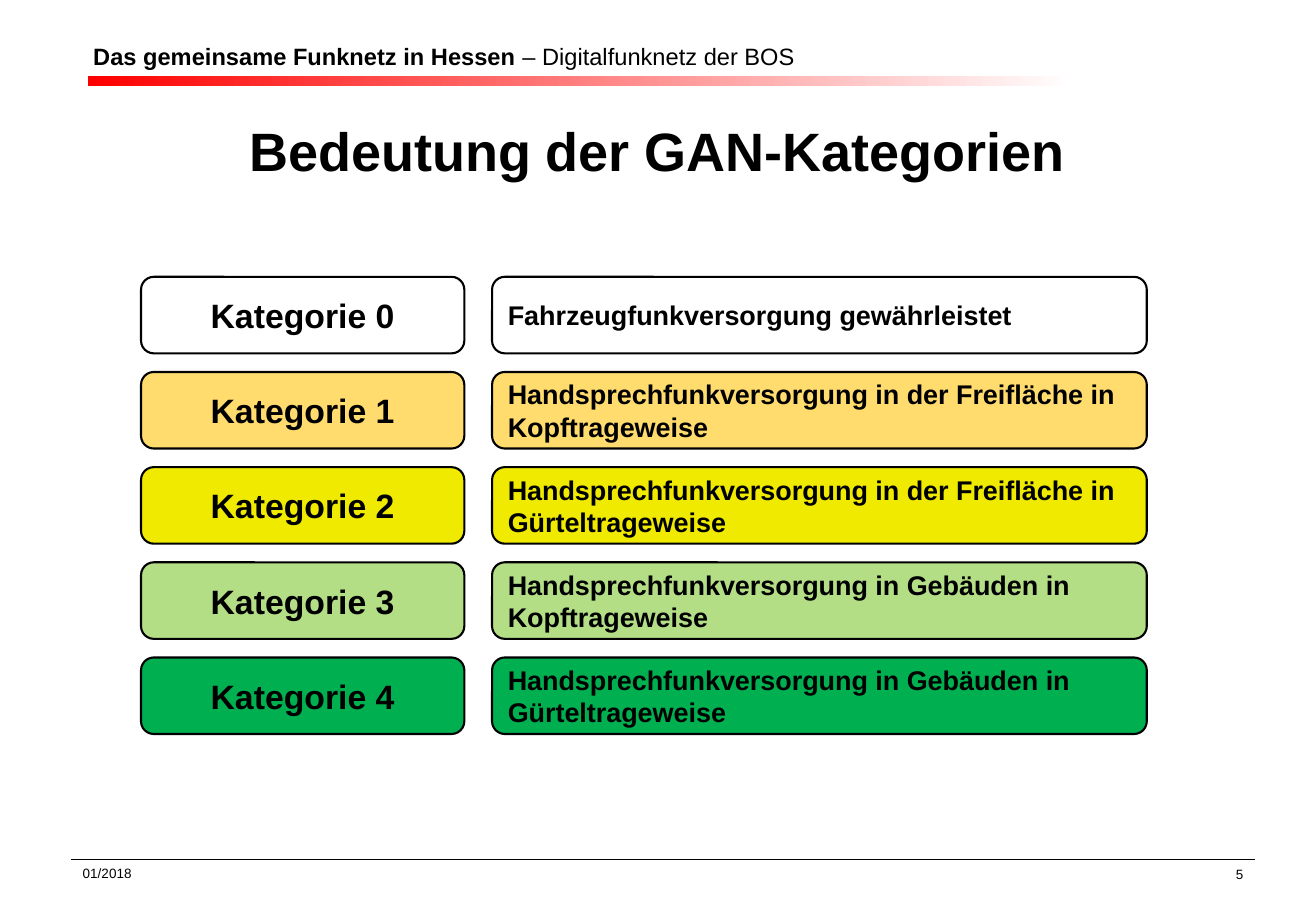
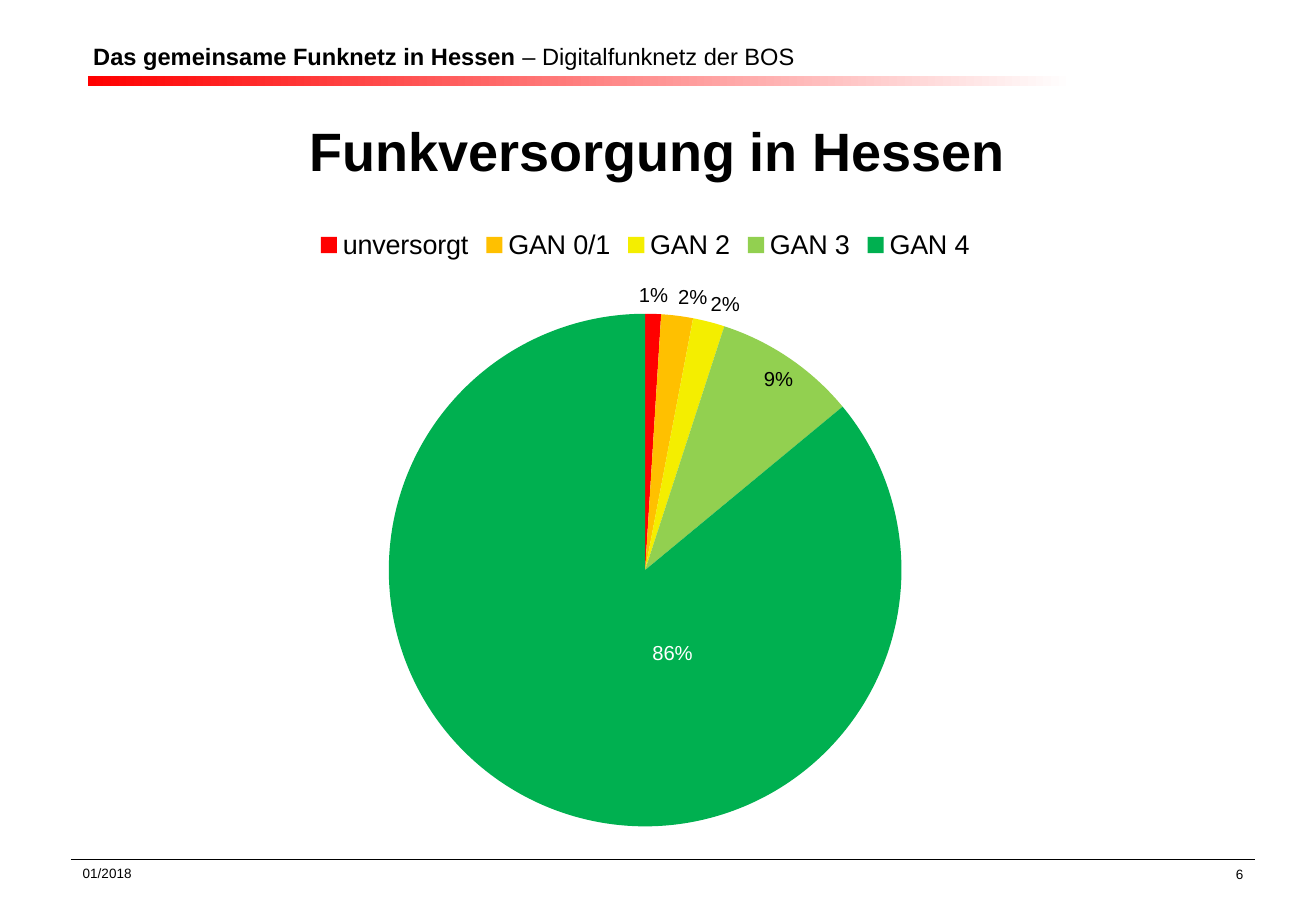
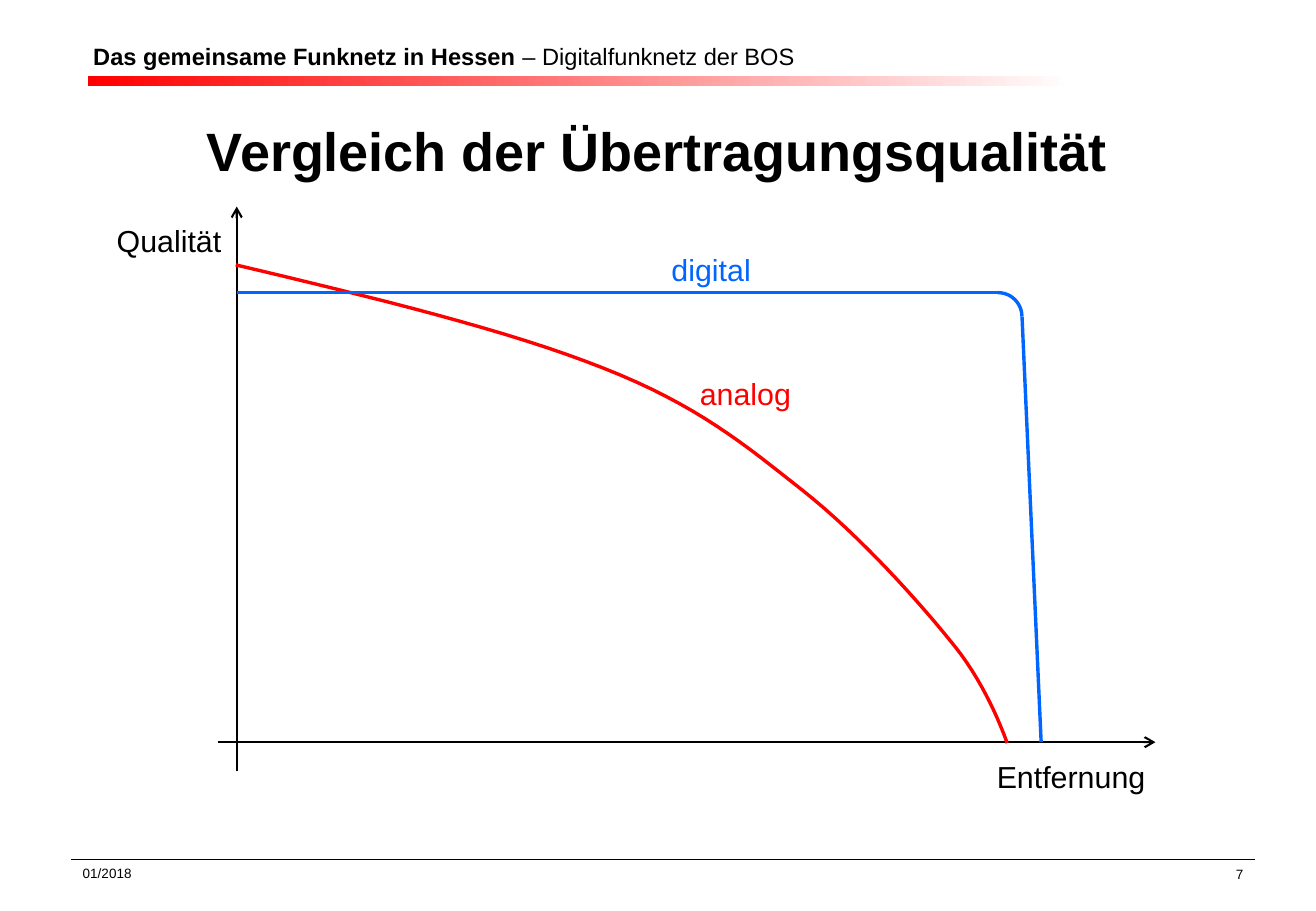
"""Builds three slides on digital radio coverage in Hessen."""
from lxml import etree
from pptx import Presentation
from pptx.chart.data import CategoryChartData
from pptx.dml.color import RGBColor
from pptx.enum.chart import XL_CHART_TYPE as CT, XL_LABEL_POSITION as LP, XL_LEGEND_POSITION as LEG
from pptx.enum.shapes import MSO_CONNECTOR as CONN, MSO_SHAPE as SHAPE
from pptx.enum.text import MSO_ANCHOR as ANCHOR, PP_ALIGN as ALIGN
from pptx.oxml.ns import qn
from pptx.util import Cm, Pt

FONT = "Arial"
BLACK, WHITE, RED, BLUE = "000000", "FFFFFF", "FF0000", "0066FF"
HEADER = [("Das gemeinsame Funknetz in Hessen", True), (" – Digitalfunknetz der BOS", False)]
DATE = "01/2018"

CATEGORIES = [
    ("Kategorie 0", "Fahrzeugfunkversorgung gewährleistet", WHITE),
    ("Kategorie 1", "Handsprechfunkversorgung in der Freifläche in Kopftrageweise", "FFDC6D"),
    ("Kategorie 2", "Handsprechfunkversorgung in der Freifläche in Gürteltrageweise", "F0EA00"),
    ("Kategorie 3", "Handsprechfunkversorgung in Gebäuden in Kopftrageweise", "B4DE86"),
    ("Kategorie 4", "Handsprechfunkversorgung in Gebäuden in Gürteltrageweise", "00B050"),
]
COVERAGE = [
    ("unversorgt", 1, RED),
    ("GAN 0/1", 2, "FFC000"),
    ("GAN 2", 2, "F4EE00"),
    ("GAN 3", 9, "92D050"),
    ("GAN 4", 86, "00B050"),
]
ANALOG_START = (4.93, 5.54)
ANALOG_CURVES = [
    ((7.8, 6.22), (10.64, 6.91), (12.62, 7.7)),
    ((14.6, 8.48), (15.57, 9.3), (16.79, 10.26)),
    ((18.01, 11.23), (19.25, 12.62), (19.96, 13.51)),
    ((20.68, 14.4), (21.06, 15.54), (21.06, 15.54)),
]


def rgb(color):
    """Return the colour for a hex string."""
    return RGBColor.from_string(color)


def style_font(font, size, color=BLACK, bold=False):
    """Set face, size, colour and weight of a font."""
    font.name, font.size, font.bold = FONT, Pt(size), bold
    font.color.rgb = rgb(color)


def write(sp, runs, size, color=BLACK, align=ALIGN.LEFT, anchor=ANCHOR.TOP, wrap=True):
    """Write (text, bold) runs as the one paragraph of a shape."""
    tf = sp.text_frame
    tf.word_wrap, tf.vertical_anchor = wrap, anchor
    p = tf.paragraphs[0]
    p.alignment = align
    for text, bold in runs:
        r = p.add_run()
        r.text = text
        style_font(r.font, size, color, bold)


def add_text(s, box, runs, size, **options):
    """Add a text box."""
    sp = s.shapes.add_textbox(*map(Cm, box))
    write(sp, runs, size, **options)


def add_line(shapes, start, end, color=BLACK, width=1.25, arrow=False):
    """Add a straight line, with an arrowhead at its end if wanted."""
    line = shapes.add_connector(CONN.STRAIGHT, *map(Cm, start + end))
    line.line.color.rgb, line.line.width = rgb(color), Pt(width)
    etree.SubElement(line._element.spPr, qn("a:effectLst"))
    if arrow:
        etree.SubElement(line.line._get_or_add_ln(), qn("a:tailEnd"), type="arrow")


def add_box(s, box, text, fill, size, align):
    """Add a rounded box with bold text."""
    sp = s.shapes.add_shape(SHAPE.ROUNDED_RECTANGLE, *map(Cm, box))
    sp.shadow.inherit = False
    sp.fill.solid()
    sp.fill.fore_color.rgb = rgb(fill)
    sp.line.color.rgb, sp.line.width = rgb(BLACK), Pt(1.25)
    write(sp, [(text, True)], size, align=align, anchor=ANCHOR.MIDDLE)


def outline(sp, color):
    """Leave a shape unfilled with a curve-weight outline."""
    sp.shadow.inherit = False
    sp.fill.background()
    sp.line.color.rgb, sp.line.width = rgb(color), Pt(2)


def bezier(p0, p1, p2, p3, steps=16):
    """Return points along a cubic curve, without its start."""
    points = []
    for i in range(1, steps + 1):
        t = i / steps
        u = 1 - t
        weights = (u ** 3, 3 * u * u * t, 3 * u * t * t, t ** 3)
        points.append(tuple(
            Cm(sum(w * p[axis] for w, p in zip(weights, (p0, p1, p2, p3))))
            for axis in (0, 1)))
    return points


def set_layout(parent, index, **values):
    """Give a chart part a manual layout."""
    for old in parent.findall(qn("c:layout")):
        parent.remove(old)
    layout = etree.Element(qn("c:layout"))
    manual = etree.SubElement(layout, qn("c:manualLayout"))
    for name, value in values.items():
        etree.SubElement(manual, qn("c:" + name), val=str(value))
    parent.insert(index, layout)


def new_slide(prs, title, number):
    """Add a slide with header, gradient band, title and footer."""
    s = prs.slides.add_slide(prs.slide_layouts[6])
    band = s.shapes.add_shape(SHAPE.RECTANGLE, Cm(1.84), Cm(1.6), Cm(20.62), Cm(0.2))
    band.shadow.inherit = False
    band.line.fill.background()
    band.fill.gradient()
    band.fill.gradient_angle = 0
    for stop, color, position in zip(band.fill.gradient_stops, (RED, WHITE), (0, 1)):
        stop.color.rgb, stop.position = rgb(color), position
    add_text(s, (1.7, 0.64, 17.86, 1.07), HEADER, 14, anchor=ANCHOR.MIDDLE)
    add_text(s, (1, 2.33, 25.5, 1.63), [(title, True)], 32, align=ALIGN.CENTER)
    add_line(s.shapes, (1.48, 17.98), (26.24, 17.98), width=0.75)
    add_text(s, (1.48, 17.97, 8.15, 0.6), [(DATE, False)], 8)
    add_text(s, (20.52, 17.98, 5.73, 0.46), [(str(number), False)], 8, align=ALIGN.RIGHT)
    return s


def add_categories(s):
    """Add one row of two boxes for each category."""
    for i, (name, meaning, fill) in enumerate(CATEGORIES):
        top = 5.79 + i * 1.99
        add_box(s, (2.95, top, 6.76, 1.6), name, fill, 20, ALIGN.CENTER)
        add_box(s, (10.29, top, 13.69, 1.6), meaning, fill, 16, ALIGN.LEFT)


def add_pie(s):
    """Add the pie chart of radio coverage."""
    data = CategoryChartData()
    data.categories = [name for name, _, _ in COVERAGE]
    data.add_series("Series 1", [value for _, value, _ in COVERAGE])
    chart = s.shapes.add_chart(CT.PIE, Cm(2.77), Cm(4.52), Cm(21.44), Cm(13.46), data).chart
    style_font(chart.font, 12)
    chart.has_title = False
    chart.has_legend = True
    chart.legend.position = LEG.TOP
    chart.legend.include_in_layout = False
    style_font(chart.legend.font, 16)
    plot = chart.plots[0]
    plot.vary_by_categories = True
    series = plot.series[0]
    for i, (_, _, color) in enumerate(COVERAGE):
        fill = series.points[i].format.fill
        fill.solid()
        fill.fore_color.rgb = rgb(color)
    labels = series.data_labels
    labels.show_percentage, labels.show_value = True, False
    labels.number_format, labels.number_format_is_linked = "0%", False
    labels.position = LP.BEST_FIT
    style_font(labels.font, 12)
    largest = series.points[len(COVERAGE) - 1].data_label
    style_font(largest.font, 12, WHITE)
    largest.position = LP.CENTER
    label = labels._element.find(qn("c:dLbl"))
    label.find(qn("c:showVal")).set("val", "0")
    label.find(qn("c:showPercent")).set("val", "1")
    set_layout(label, 1, x=0.08, y=-0.05)
    area = chart._chartSpace.find(".//" + qn("c:plotArea"))
    set_layout(area, 0, layoutTarget="inner", xMode="edge", yMode="edge",
               x=0.25, y=0.15, w=0.5, h=0.8)


def add_quality_diagram(s):
    """Add the axes and the analogue and digital curves."""
    add_line(s.shapes, (4.55, 15.52), (24.16, 15.52), arrow=True)
    add_line(s.shapes, (4.95, 16.13), (4.95, 4.32), arrow=True)
    builder = s.shapes.build_freeform(*map(Cm, ANALOG_START))
    start = ANALOG_START
    for curve in ANALOG_CURVES:
        builder.add_line_segments(bezier(start, *curve), close=False)
        start = curve[-1]
    outline(builder.convert_to_shape(), RED)
    digital = s.shapes.add_group_shape().shapes
    add_line(digital, (4.95, 6.12), (20.87, 6.12), BLUE, 2)
    outline(digital.add_shape(SHAPE.ARC, Cm(20.37), Cm(6.12), Cm(1), Cm(1)), BLUE)
    add_line(digital, (21.37, 6.62), (21.77, 15.52), BLUE, 2)
    for text, box, color in [
        ("Entfernung", (20.5, 15.72, 3.7, 1.02), BLACK),
        ("Qualität", (2.11, 4.52, 2.77, 1.02), BLACK),
        ("digital", (13.72, 5.13, 2.23, 1.02), BLUE),
        ("analog", (14.3, 7.72, 2.49, 1.02), RED),
    ]:
        add_text(s, box, [(text, False)], 18, color=color, align=ALIGN.RIGHT, wrap=False)


def main():
    """Build and save the presentation."""
    prs = Presentation()
    prs.slide_height = Cm(19.05)
    prs.slide_width = prs.slide_height * 13 // 9
    slides = [
        ("Bedeutung der GAN-Kategorien", add_categories),
        ("Funkversorgung in Hessen", add_pie),
        ("Vergleich der Übertragungsqualität", add_quality_diagram),
    ]
    for number, (title, add_content) in enumerate(slides, 5):
        add_content(new_slide(prs, title, number))
    prs.save("out.pptx")


if __name__ == "__main__":
    main()
